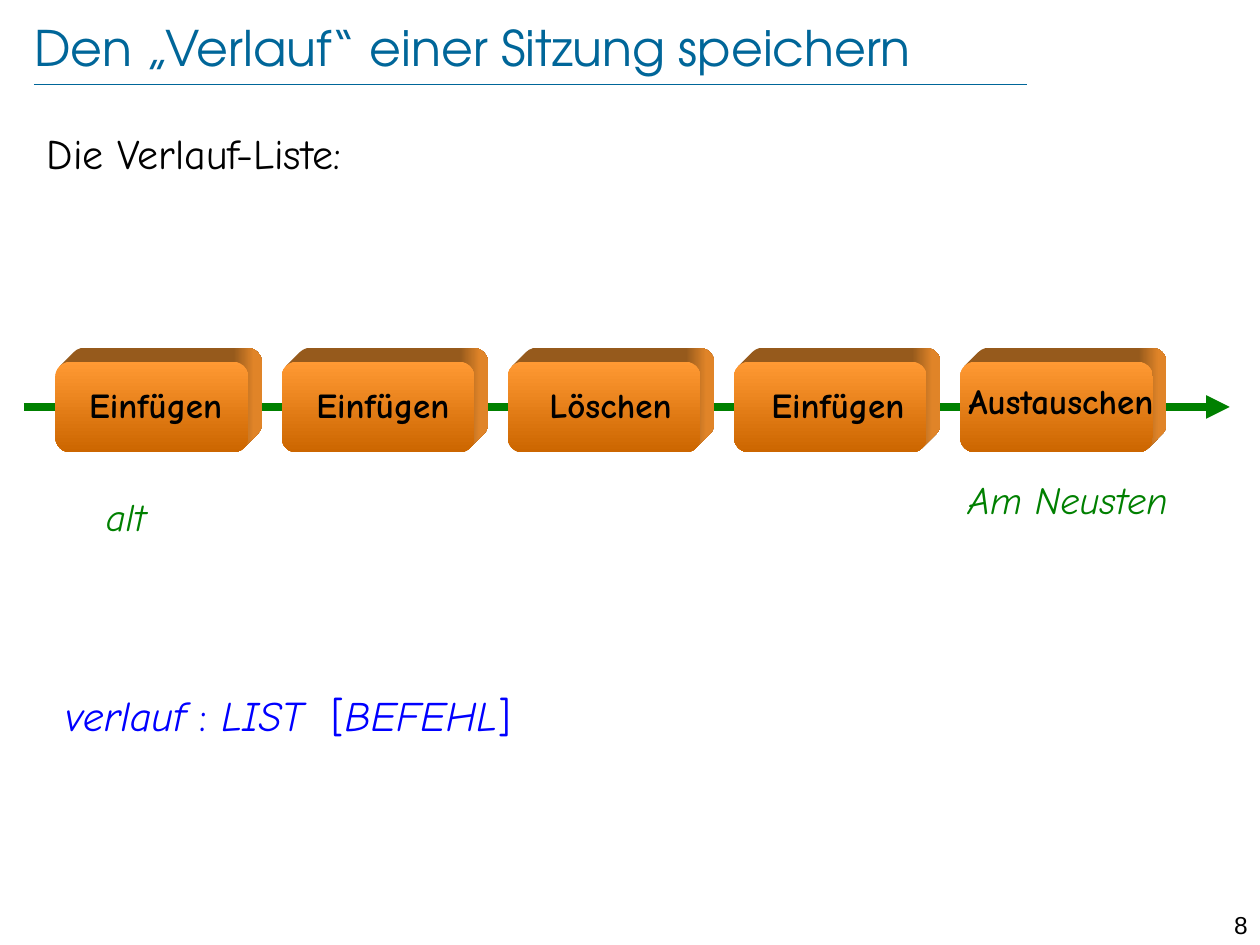
from math import cos, radians, sin

from lxml.etree import SubElement
from pptx import Presentation
from pptx.dml.color import RGBColor
from pptx.enum.shapes import MSO_CONNECTOR as Connector, MSO_SHAPE as Shape
from pptx.enum.text import MSO_ANCHOR as Anchor, PP_ALIGN as Align
from pptx.oxml.ns import qn
from pptx.util import Inches, Pt

TEAL = RGBColor(0x00, 0x66, 0x99)
GREEN = RGBColor(0x00, 0x80, 0x00)
BLUE = RGBColor(0x00, 0x00, 0xFF)
BLACK = RGBColor(0x00, 0x00, 0x00)
ORANGE = RGBColor(0xFF, 0x99, 0x33)
RUST = RGBColor(0xCC, 0x66, 0x00)
TOP_SIDE = RGBColor(0x96, 0x5A, 0x1C)
RIGHT_SIDE = RGBColor(0xE0, 0x84, 0x28)

HEADING_FONT, HAND_FONT, NUMBER_FONT = "TeX Gyre Adventor", "Comic Neue", "Arial"

TITLE = "Den „Verlauf“ einer Sitzung speichern"
INTRO = "Die Verlauf-Liste:"
DECLARATION = [("verlauf ", True), (": ", False), ("LIST  ", True),
               ("[", False), ("BEFEHL", True), ("]", False)]
# label, left, top, width, height
COMMANDS = [
    ("Einfügen", (0.44, 2.97, 1.59, 0.48)),
    ("Einfügen", (2.26, 2.97, 1.56, 0.48)),
    ("Löschen", (4.15, 2.99, 1.39, 0.44)),
    ("Einfügen", (5.86, 2.97, 1.58, 0.48)),
    ("Austauschen", (7.47, 2.96, 1.9, 0.44)),
]
AGES = [("alt", (0.32, 3.86, 1.36, 0.47)), ("Am Neusten", (7.4, 3.73, 2.15, 0.47))]

BLOCK_LEFT, BLOCK_TOP, BLOCK_STEP = 0.44, 2.87, 1.795
BLOCK_WIDTH, BLOCK_HEIGHT, RADIUS, DEPTH = 1.53, 0.72, 0.12, 0.11


def place(shape, box):
    shape.left, shape.top, shape.width, shape.height = map(Inches, box)


def write(shape, runs, size, color, font=HAND_FONT, align=Align.LEFT, bold=False):
    shape.text_frame.word_wrap = True
    paragraph = shape.text_frame.paragraphs[0]
    paragraph.alignment = align
    paragraph.space_before = Pt(0)
    for text, italic in runs:
        run = paragraph.add_run()
        run.text = text
        run.font.name, run.font.size = font, Pt(size)
        run.font.bold, run.font.italic = bold, italic
        run.font.color.rgb = color


def add_text(slide, box, runs, size, color, **style):
    shape = slide.shapes.add_textbox(*map(Inches, box))
    shape.text_frame.vertical_anchor = Anchor.MIDDLE
    write(shape, runs, size, color, **style)


def add_line(slide, start, end, color, width):
    line = slide.shapes.add_connector(Connector.STRAIGHT, *map(Inches, start + end))
    line.line.color.rgb, line.line.width = color, Pt(width)
    SubElement(line._element.spPr, qn("a:effectLst"))
    return line


def paint(shape, stops, angle):
    shape.shadow.inherit = False
    shape.line.fill.background()
    shape.fill.gradient()
    shape.fill.gradient_angle = angle
    for stop, (position, color) in zip(shape.fill.gradient_stops, stops):
        stop.position, stop.color.rgb = position, color


def add_block(slide, left, top):
    """Draw a rounded block with its depth to the upper right."""
    right, bottom = left + BLOCK_WIDTH, top + BLOCK_HEIGHT
    corners = [(left + RADIUS, top + RADIUS, 225, 270),
               (right - RADIUS, top + RADIUS, 270, 360),
               (right - RADIUS, bottom - RADIUS, 0, 45)]
    arc = [(x + RADIUS * cos(radians(angle)), y + RADIUS * sin(radians(angle)))
           for x, y, first, last in corners for angle in range(first, last + 1, 15)]
    outline = [(x + DEPTH, y - DEPTH) for x, y in arc] + [arc[-1], arc[0]]
    points = [(Inches(x), Inches(y)) for x, y in outline]
    builder = slide.shapes.build_freeform(*points[0])
    builder.add_line_segments(points[1:], close=True)
    paint(builder.convert_to_shape(), [(0.86, TOP_SIDE), (0.96, RIGHT_SIDE)], 0)
    face = slide.shapes.add_shape(
        Shape.ROUNDED_RECTANGLE, *map(Inches, (left, top, BLOCK_WIDTH, BLOCK_HEIGHT)))
    face.adjustments[0] = RADIUS / BLOCK_HEIGHT
    paint(face, [(0, ORANGE), (1, RUST)], 270)


def main():
    presentation = Presentation()
    presentation.slide_width, presentation.slide_height = Inches(10), Inches(7.5)
    slide = presentation.slides.add_slide(presentation.slide_layouts[1])

    add_line(slide, (0.27, 0.67), (8.15, 0.67), TEAL, 0.25)
    title, body = slide.placeholders
    place(title, (0.27, 0.13, 8.69, 0.48))
    frame = title.text_frame
    frame.margin_left = frame.margin_top = frame.margin_right = frame.margin_bottom = 0
    frame.vertical_anchor = Anchor.MIDDLE
    write(title, [(TITLE, False)], 28, TEAL, font=HEADING_FONT)

    place(body, (0.27, 0.96, 9.4, 6.17))
    properties = body.text_frame.paragraphs[0]._p.get_or_add_pPr()
    properties.set("marL", "0")
    properties.set("indent", "0")
    SubElement(properties, qn("a:buNone"))
    write(body, [(INTRO, False)], 24, BLACK)

    add_text(slide, (0.42, 5.42, 9.17, 0.5), DECLARATION, 24, BLUE)
    arrow = add_line(slide, (0.19, 3.23), (9.76, 3.23), GREEN, 4.5)
    SubElement(arrow.line._get_or_add_ln(), qn("a:tailEnd"), type="triangle")

    for column in range(len(COMMANDS)):
        add_block(slide, BLOCK_LEFT + column * BLOCK_STEP, BLOCK_TOP)
    for label, box in COMMANDS:
        add_text(slide, box, [(label, False)], 20, BLACK, align=Align.CENTER, bold=True)
    for label, box in AGES:
        add_text(slide, box, [(label, True)], 22, GREEN, align=Align.CENTER)
    add_text(slide, (9.45, 7.16, 0.55, 0.36), [("8", False)], 14, BLACK,
             font=NUMBER_FONT, align=Align.RIGHT)
    presentation.save("out.pptx")


if __name__ == "__main__":
    main()
